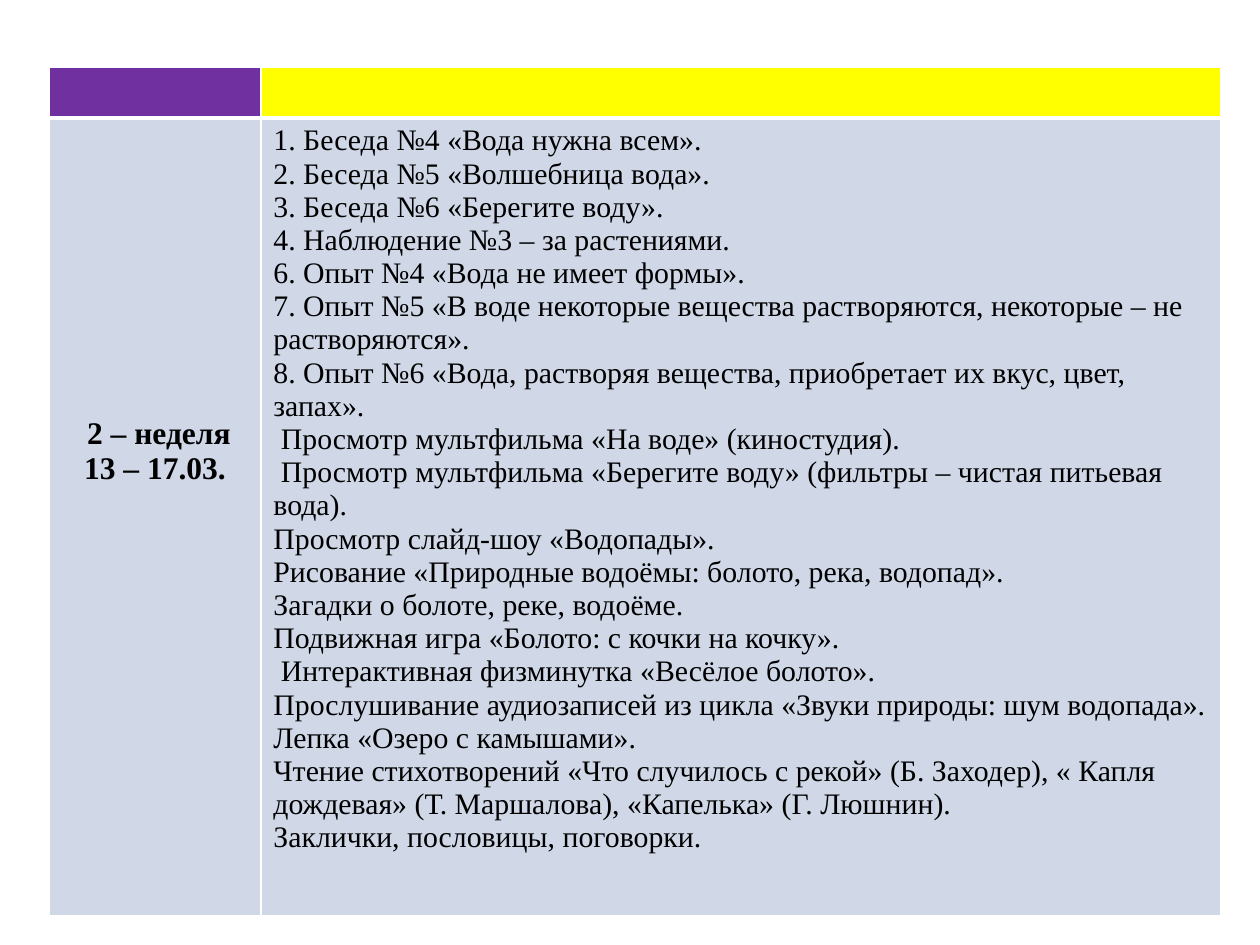
from dataclasses import dataclass

from lxml.etree import SubElement
from pptx import Presentation
from pptx.dml.color import RGBColor
from pptx.enum.text import PP_ALIGN as Align
from pptx.oxml.ns import qn
from pptx.util import Inches, Pt


@dataclass(frozen=True)
class Theme:
    """Colours, font and type sizes of the slide."""
    purple: str = "7030A0"
    yellow: str = "FFFF00"
    body: str = "D0D8E8"
    border: str = "FFFFFF"
    text: str = "000000"
    font: str = "Times New Roman"
    week_size: int = 18
    plan_size: int = 17


THEME = Theme()
COLUMN_WIDTHS = (1.68, 7.62)
ROW_HEIGHTS = (0.4, 6.33)
WEEK = (" 2 – неделя", "13 – 17.03.")
PLAN = (
    "1. Беседа №4 «Вода нужна всем».",
    "2. Беседа №5 «Волшебница вода».",
    "3. Беседа №6 «Берегите воду».",
    "4. Наблюдение №3 – за растениями.",
    "6. Опыт №4 «Вода не имеет формы».",
    "7. Опыт №5 «В воде некоторые вещества растворяются, некоторые – не растворяются».",
    "8. Опыт №6 «Вода, растворяя вещества, приобретает их вкус, цвет, запах».",
    " Просмотр мультфильма «На воде» (киностудия).",
    " Просмотр мультфильма «Берегите воду» (фильтры – чистая питьевая вода).",
    "Просмотр слайд-шоу «Водопады».",
    "Рисование «Природные водоёмы: болото, река, водопад».",
    "Загадки о болоте, реке, водоёме.",
    "Подвижная игра «Болото: с кочки на кочку».",
    " Интерактивная физминутка «Весёлое болото».",
    "Прослушивание аудиозаписей из цикла «Звуки природы: шум водопада».",
    "Лепка «Озеро с камышами».",
    "Чтение стихотворений «Что случилось с рекой» (Б. Заходер), « Капля дождевая» "
    "(Т. Маршалова), «Капелька» (Г. Люшнин).",
    "Заклички, пословицы, поговорки.",
)


def style_cell(cell, fill, top=1, bottom=1):
    """Give a cell its fill and white borders."""
    properties = cell._tc.get_or_add_tcPr()
    for side, width in (("L", 1), ("R", 1), ("T", top), ("B", bottom)):
        line = SubElement(properties, qn(f"a:ln{side}"), w=str(Pt(width)))
        solid = SubElement(line, qn("a:solidFill"))
        SubElement(solid, qn("a:srgbClr"), val=THEME.border)
    cell.fill.solid()
    cell.fill.fore_color.rgb = RGBColor.from_string(fill)


def write_lines(cell, lines, size, bold=False, align=Align.LEFT):
    """Write one paragraph per line into a cell."""
    frame = cell.text_frame
    for index, line in enumerate(lines):
        paragraph = frame.add_paragraph() if index else frame.paragraphs[0]
        paragraph.alignment = align
        run = paragraph.add_run()
        run.text = line
        run.font.name = THEME.font
        run.font.size = Pt(size)
        run.font.bold = bold
        run.font.color.rgb = RGBColor.from_string(THEME.text)


def add_plan_table(slide):
    """Add the weekly plan with its coloured header row."""
    table = slide.shapes.add_table(
        2, 2, Inches(0.39), Inches(0.53),
        Inches(sum(COLUMN_WIDTHS)), Inches(sum(ROW_HEIGHTS))).table
    for column, width in zip(table.columns, COLUMN_WIDTHS):
        column.width = Inches(width)
    for row, height in zip(table.rows, ROW_HEIGHTS):
        row.height = Inches(height)
    for index, header_fill in enumerate((THEME.purple, THEME.yellow)):
        style_cell(table.cell(0, index), header_fill, bottom=3)
        style_cell(table.cell(1, index), THEME.body, top=3)
    week_cell, plan_cell = table.cell(1, 0), table.cell(1, 1)
    week_cell.margin_top = Inches(2.37)
    write_lines(week_cell, WEEK, THEME.week_size, bold=True, align=Align.CENTER)
    write_lines(plan_cell, PLAN, THEME.plan_size)


def main():
    """Build and save the presentation."""
    presentation = Presentation()
    presentation.slide_width = Inches(10)
    presentation.slide_height = Inches(7.5)
    slide = presentation.slides.add_slide(presentation.slide_layouts[6])
    add_plan_table(slide)
    presentation.save("out.pptx")


if __name__ == "__main__":
    main()
